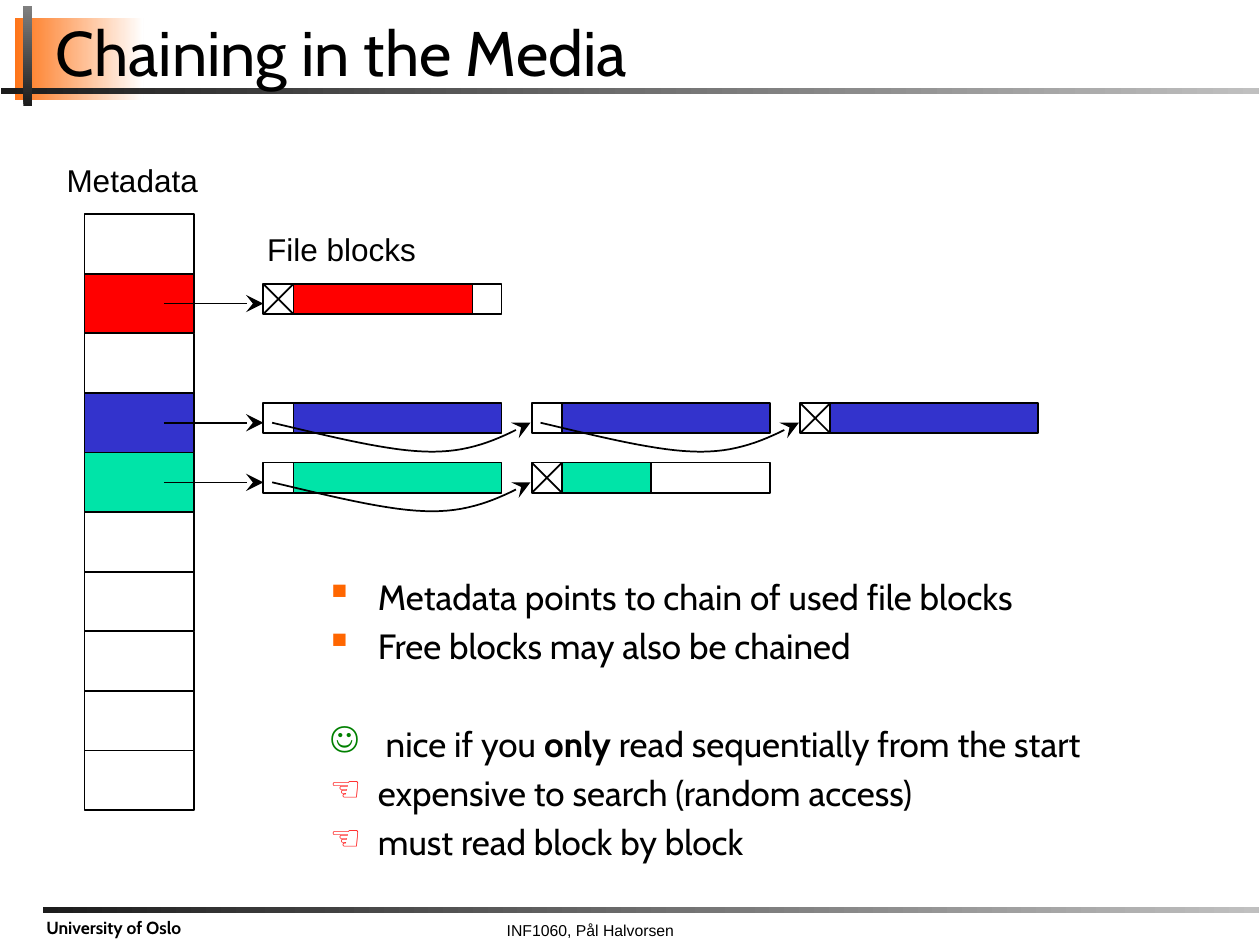
"""Builds the slide on chaining file blocks in the media."""
from lxml.etree import SubElement
from pptx import Presentation
from pptx.dml.color import RGBColor
from pptx.enum.shapes import MSO_CONNECTOR as CONNECTOR, MSO_SHAPE as SHAPE
from pptx.enum.text import MSO_ANCHOR as ANCHOR, PP_ALIGN as ALIGN
from pptx.oxml.ns import qn
from pptx.util import Inches, Pt

COLORS = {"black": "000000", "dark": "1C1C1C", "gray": "808080", "silver": "C0C0C0",
          "white": "FFFFFF", "orange": "FE7519", "bullet": "FF6600", "red": "FF0000",
          "blue": "3333CC", "green": "00E4A8", "smile": "008000"}
RGB = {name: RGBColor.from_string(value) for name, value in COLORS.items()}
ROW = 4.73 / 10
TABLE_LEFT, TABLE_TOP = 0.67, 1.7
BLOCK_LEFT, BLOCK_STEP, POINTER, DATA = 2.09, 2.13, 0.24, 1.65
ARROWHEAD = {"type": "stealth", "w": "lg", "len": "lg"}


def add_box(left, top, width, height, color=None):
    box = slide.shapes.add_shape(SHAPE.RECTANGLE, Inches(left), Inches(top),
                                 Inches(width), Inches(height))
    box.shadow.inherit = False
    box.line.color.rgb = RGB["black"]
    box.line.width = Pt(1)
    if color:
        box.fill.solid()
        box.fill.fore_color.rgb = RGB[color]
    else:
        box.fill.background()
    return box


def add_line(start, end, arrow=False):
    line = slide.shapes.add_connector(CONNECTOR.STRAIGHT, *map(Inches, start + end))
    line.line.color.rgb = RGB["black"]
    line.line.width = Pt(1)
    if arrow:
        SubElement(line.element.spPr.find(qn("a:ln")), qn("a:tailEnd"), ARROWHEAD)
    SubElement(line.element.spPr, qn("a:effectLst"))


prs = Presentation()
prs.slide_width, prs.slide_height = Inches(10), Inches(7.5)
slide = prs.slides.add_slide(prs.slide_layouts[5])

for left, top, width, height, first, last, rotation in [
    (0.12, 0.14, 1.02, 0.65, "orange", "white", 0),
    (0.01, 0.7, 9.98, 0.05, "dark", "silver", 0),
    (-0.18, 0.41, 0.8, 0.07, "dark", "gray", 270),
    (0.34, 7.2, 9.65, 0.05, "dark", "silver", 0),
]:
    bar = add_box(left, top, width, height)
    bar.line.fill.background()
    bar.rotation = rotation
    bar.fill.gradient()
    bar.fill.gradient_angle = 0
    for stop, color in zip(bar.fill.gradient_stops, (first, last)):
        stop.color.rgb = RGB[color]

title = slide.shapes.title
title.element.getparent().append(title.element)
title.left, title.top, title.width, title.height = map(Inches, (0.34, 0.14, 9.62, 0.61))
title.text_frame.text = "Chaining in the Media"
title.text_frame.vertical_anchor = ANCHOR.BOTTOM
title.text_frame.margin_right = Inches(0.04)
heading = title.text_frame.paragraphs[0]
heading.alignment = ALIGN.LEFT
heading.line_spacing = 0.8
heading.font.size = Pt(36)
heading.font.name = "Cabin"
heading.font.color.rgb = RGB["black"]

for row in range(10):
    color = {1: "red", 3: "blue", 4: "green"}.get(row)
    add_box(TABLE_LEFT, TABLE_TOP + row * ROW, 0.87, ROW, color)

for row, color, used_widths in [(1, "red", [1.42]), (3, "blue", [DATA] * 3),
                                (4, "green", [DATA, 0.71])]:
    block_top = TABLE_TOP + row * ROW + 0.08
    block_bottom = block_top + POINTER
    link_y = TABLE_TOP + (row + 0.5) * ROW
    add_line((1.3, link_y), (BLOCK_LEFT, link_y), arrow=True)
    for index, used in enumerate(used_widths):
        left = BLOCK_LEFT + index * BLOCK_STEP
        data_left = left + POINTER
        add_box(left, block_top, POINTER, POINTER)
        if used < DATA:
            add_box(data_left, block_top, DATA, POINTER)
        add_box(data_left, block_top, used, POINTER, color)
        if index == len(used_widths) - 1:
            add_line((left, block_bottom), (data_left, block_top))
            add_line((left, block_top), (data_left, block_bottom))
    for index in range(len(used_widths) - 1):
        left = BLOCK_LEFT + 0.07 + index * BLOCK_STEP
        points = []
        for curve in [((0, 0), (0.47, 0.11), (0.93, 0.23), (1.27, 0.23)),
                      ((1.27, 0.23), (1.61, 0.23), (1.83, 0.11), (2.05, 0))]:
            for t in (step / 16 for step in range(17)):
                weights = ((1 - t) ** 3, 3 * t * (1 - t) ** 2, 3 * t ** 2 * (1 - t), t ** 3)
                x, y = (sum(w * v for w, v in zip(weights, axis)) for axis in zip(*curve))
                points.append((Inches(left + x), Inches(link_y + y)))
        builder = slide.shapes.build_freeform(*points[0])
        builder.add_line_segments(points[1:], close=False)
        link = builder.convert_to_shape()
        link.shadow.inherit = False
        link.fill.background()
        link.line.color.rgb = RGB["black"]
        link.line.width = Pt(1)
        SubElement(link.element.spPr.find(qn("a:ln")), qn("a:tailEnd"), ARROWHEAD)

for text, left, top, width, height, size, font, bold, align, wrap, inset in [
    ("Metadata", 0.43, 1.23, 1.24, 0.4, 18, "Arial", False, ALIGN.CENTER, False, 0.05),
    ("File blocks", 2.02, 1.78, 1.38, 0.4, 18, "Arial", False, ALIGN.CENTER, False, 0.05),
    ("INF1060, Pål Halvorsen", 1.89, 7.28, 5.59, 0.23, 9, "Arial", False, ALIGN.CENTER, True, 0.03),
    ("University of Oslo", 0.27, 7.25, 1.63, 0.24, 10, "Cabin", True, ALIGN.LEFT, True, 0.03),
]:
    label = slide.shapes.add_textbox(*map(Inches, (left, top, width, height))).text_frame
    label.word_wrap = wrap
    label.margin_top = Inches(inset)
    label.text = text
    caption = label.paragraphs[0]
    caption.alignment = align
    caption.font.size = Pt(size)
    caption.font.name = font
    caption.font.bold = bold
    caption.font.color.rgb = RGB["black"]

remarks = slide.shapes.add_textbox(*map(Inches, (2.52, 4.52, 7.48, 2.5))).text_frame
remarks.word_wrap = True
remarks.margin_right = Inches(0.06)
for index, (bullet, color, size, gap, parts) in enumerate([
    ("§", "bullet", 120, 0, ["Metadata points to chain of used file blocks"]),
    ("§", "bullet", 120, 4, ["Free blocks may also be chained"]),
    ("J", "smile", 100, 32, [" nice if you ", "only ", "read sequentially from the start"]),
    ("D", "red", 100, 4, ["expensive to search (random access)"]),
    ("D", "red", 100, 4, ["must read block by block"]),
]):
    remark = remarks.add_paragraph() if index else remarks.paragraphs[0]
    properties = remark._p.get_or_add_pPr()
    properties.set("marL", str(Inches(0.38)))
    properties.set("indent", str(Inches(-0.38)))
    bullet_color = SubElement(properties, qn("a:buClr"))
    SubElement(bullet_color, qn("a:srgbClr"), val=COLORS[color])
    SubElement(properties, qn("a:buSzPct"), val=str(size * 1000))
    SubElement(properties, qn("a:buFont"), typeface="Wingdings", pitchFamily="2", charset="2")
    SubElement(properties, qn("a:buChar"), char=bullet)
    if gap:
        remark.space_before = Pt(gap)
    remark.font.size = Pt(20)
    remark.font.name = "Cabin"
    remark.font.color.rgb = RGB["black"]
    for part in parts:
        run = remark.add_run()
        run.text = part
        if part == "only ":
            run.font.bold = True

prs.save("out.pptx")
